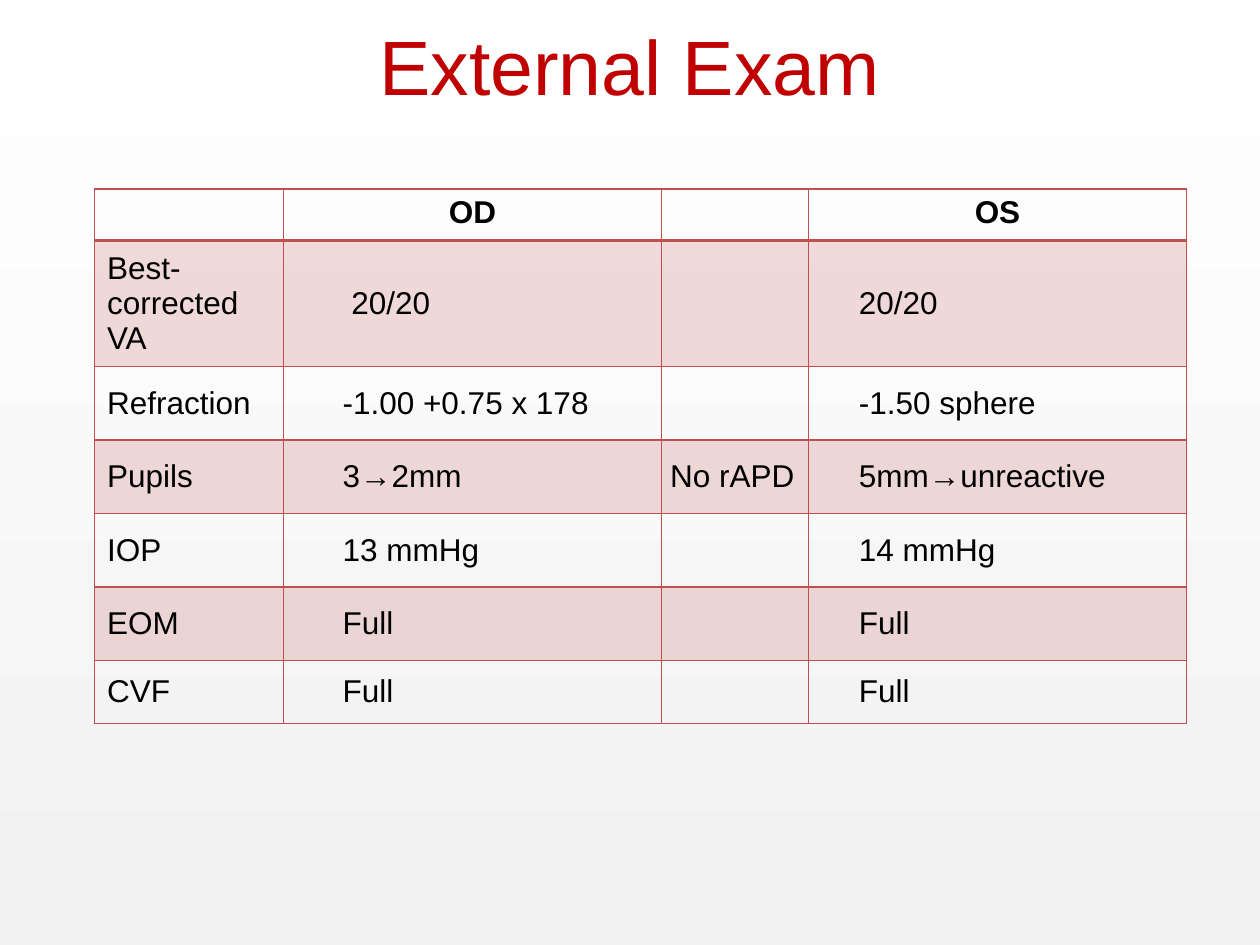
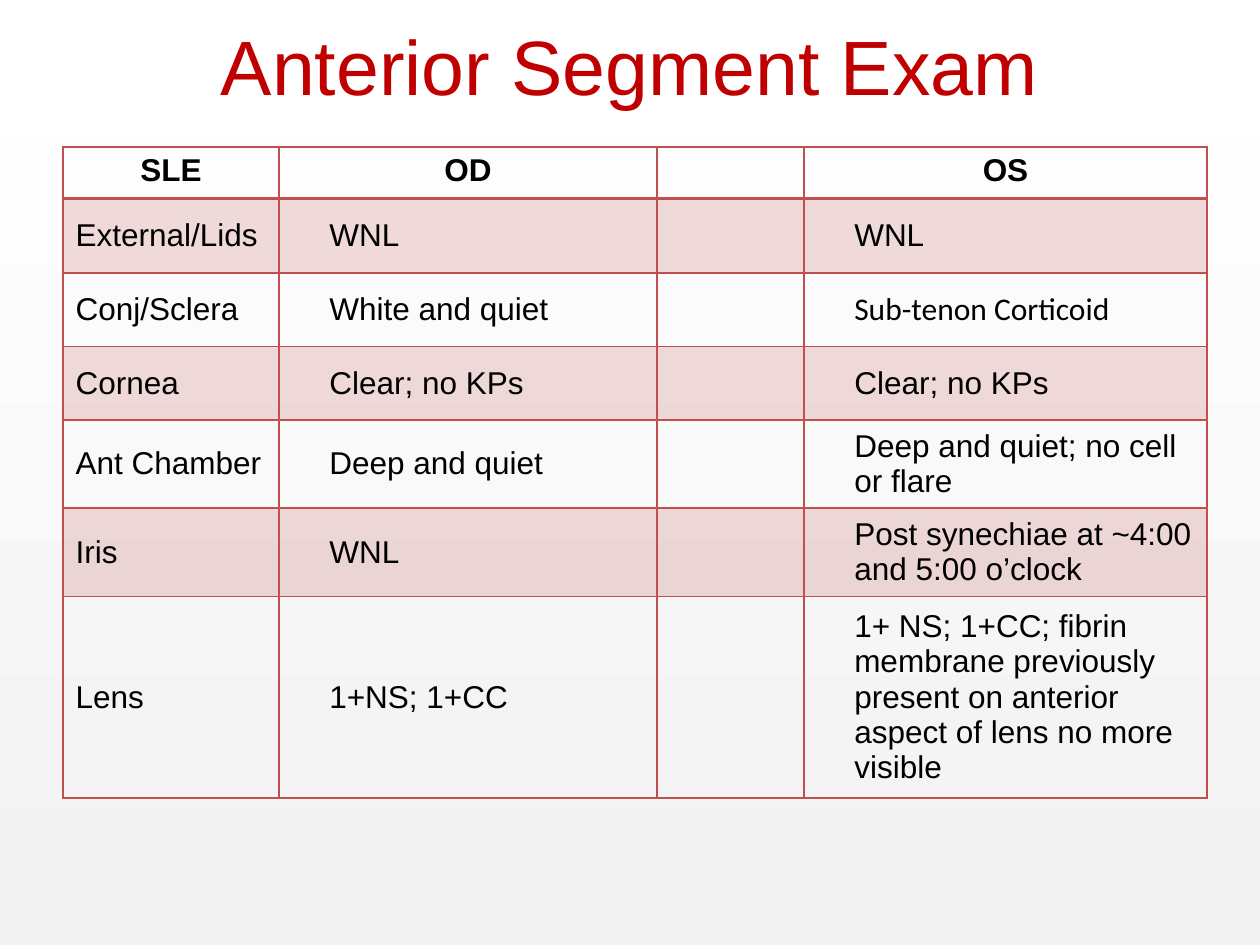
from dataclasses import dataclass

from lxml.etree import SubElement
from pptx import Presentation
from pptx.dml.color import RGBColor
from pptx.enum.shapes import MSO_SHAPE
from pptx.enum.text import MSO_ANCHOR, PP_ALIGN
from pptx.oxml.ns import qn
from pptx.presentation import Presentation as Deck
from pptx.slide import Slide
from pptx.table import _Cell
from pptx.text.text import TextFrame
from pptx.util import Pt

SLIDE_WIDTH, SLIDE_HEIGHT = 720, 540
ACCENT = "C0504D"
TITLE_COLOR = "C00000"
TEXT_COLOR = "000000"
BACKDROP_BOTTOM, BACKDROP_TOP = "F2F2F2", "FFFFFF"
FONT = "Arial"
BAND_ALPHA = 20
THIN, THICK = 1, 2
LABEL_INSET = 7.2
EYE_INSET = 28.8
SPACE_WIDTH = 5
ROW_HEIGHTS = [29.5, 42.5, 42, 42, 42, 42, 36]


@dataclass(frozen=True)
class Entry:
    text: str = ""
    inset: float = LABEL_INSET
    font: str = FONT


@dataclass(frozen=True)
class ExamTable:
    title: str
    left: float
    top: float
    height: float
    column_widths: list[float]
    headings: list[str]
    findings: list[list[Entry]]


def color(value: str) -> RGBColor:
    return RGBColor.from_string(value)


def eye(text: str, extra: float = 0, font: str = FONT) -> Entry:
    return Entry(text, EYE_INSET + extra, font)


def finding(label: str, right_eye: Entry, left_eye: Entry,
            between: Entry = Entry()) -> list[Entry]:
    return [Entry(label), right_eye, between, left_eye]


def write(frame: TextFrame, text: str, size: float, text_color: str,
          font: str = FONT, bold: bool = False, centered: bool = False) -> None:
    paragraph = frame.paragraphs[0]
    paragraph.alignment = PP_ALIGN.CENTER if centered else PP_ALIGN.LEFT
    run = paragraph.add_run()
    run.text = text
    run.font.name = font
    run.font.size = Pt(size)
    run.font.bold = bold
    run.font.color.rgb = color(text_color)


def add_backdrop(slide: Slide) -> None:
    shape = slide.shapes.add_shape(MSO_SHAPE.RECTANGLE, 0, 0, Pt(SLIDE_WIDTH), Pt(SLIDE_HEIGHT))
    shape.shadow.inherit = False
    shape.line.fill.background()
    shape.fill.gradient()
    shape.fill.gradient_angle = 90
    for stop, value in zip(shape.fill.gradient_stops, (BACKDROP_BOTTOM, BACKDROP_TOP)):
        stop.color.rgb = color(value)


def add_title(slide: Slide, title: str) -> None:
    shape = slide.shapes.add_textbox(Pt(36), Pt(-8), Pt(648), Pt(90))
    frame = shape.text_frame
    frame.word_wrap = True
    frame.vertical_anchor = MSO_ANCHOR.MIDDLE
    write(frame, title, 44, TITLE_COLOR, centered=True)


def set_borders(cell: _Cell, top: float, bottom: float) -> None:
    properties = cell._tc.get_or_add_tcPr()
    for side, width in (("L", THIN), ("R", THIN), ("T", top), ("B", bottom)):
        line = SubElement(properties, qn(f"a:ln{side}"), w=str(Pt(width)))
        fill = SubElement(line, qn("a:solidFill"))
        SubElement(fill, qn("a:srgbClr"), val=ACCENT)


def set_fill(cell: _Cell, banded: bool) -> None:
    if not banded:
        cell.fill.background()
        return
    cell.fill.solid()
    cell.fill.fore_color.rgb = color(ACCENT)
    fill_color = cell._tc.tcPr.find(qn("a:solidFill")).find(qn("a:srgbClr"))
    SubElement(fill_color, qn("a:alpha"), val=str(BAND_ALPHA * 1000))


def fill_cell(cell: _Cell, entry: Entry, row_index: int) -> None:
    heading = row_index == 0
    set_borders(cell, THICK if row_index == 1 else THIN, THICK if heading else THIN)
    set_fill(cell, row_index % 2 == 1)
    cell.margin_left = Pt(entry.inset)
    cell.vertical_anchor = MSO_ANCHOR.TOP if heading else MSO_ANCHOR.MIDDLE
    if entry.text:
        write(cell.text_frame, entry.text, 18, TEXT_COLOR, entry.font, heading, heading)


def add_exam_table(slide: Slide, exam: ExamTable) -> None:
    rows = [[Entry(heading) for heading in exam.headings], *exam.findings]
    shape = slide.shapes.add_table(
        len(rows), len(exam.column_widths), Pt(exam.left), Pt(exam.top),
        Pt(sum(exam.column_widths)), Pt(exam.height))
    table = shape.table
    table.first_row = table.horz_banding = False
    for column, width in zip(table.columns, exam.column_widths):
        column.width = Pt(width)
    for row_index, (row, entries) in enumerate(zip(table.rows, rows)):
        row.height = Pt(ROW_HEIGHTS[row_index])
        for cell, entry in zip(row.cells, entries):
            fill_cell(cell, entry, row_index)
    shape.height = Pt(exam.height)


def add_exam_slide(presentation: Deck, exam: ExamTable) -> None:
    slide = presentation.slides.add_slide(presentation.slide_layouts[6])
    add_backdrop(slide)
    add_title(slide, exam.title)
    add_exam_table(slide, exam)


EXAMS = [
    ExamTable(
        "External Exam", 54, 108, 305.28, [108, 216, 84, 216], ["", "OD", "", "OS"],
        [
            finding("Best-corrected VA", eye("20/20", 2 * SPACE_WIDTH), eye("20/20")),
            finding("Refraction", eye("-1.00 +0.75 x 178", SPACE_WIDTH), eye("-1.50 sphere")),
            finding("Pupils", eye("3→2mm", SPACE_WIDTH), eye("5mm→unreactive"),
                    Entry("No rAPD", SPACE_WIDTH)),
            finding("IOP", eye("13 mmHg", SPACE_WIDTH), eye("14 mmHg")),
            finding("EOM", eye("Full", SPACE_WIDTH), eye("Full")),
            finding("CVF", eye("Full", SPACE_WIDTH), eye("Full")),
        ],
    ),
    ExamTable(
        "Anterior Segment Exam", 36, 84, 372.24, [123.4, 216, 84, 230.4],
        ["SLE", "OD", "", "OS"],
        [
            finding("External/Lids", eye("WNL"), eye("WNL")),
            finding("Conj/Sclera", eye("White and quiet"),
                    eye("Sub-tenon Corticoid", font="Calibri")),
            finding("Cornea", eye("Clear; no KPs"), eye("Clear; no KPs")),
            finding("Ant Chamber", eye("Deep and quiet"),
                    eye("Deep and quiet; no cell or flare")),
            finding("Iris", eye("WNL"), eye("Post synechiae at ~4:00 and 5:00 o’clock")),
            finding("Lens", eye("1+NS; 1+CC"),
                    eye("1+ NS; 1+CC; fibrin membrane previously present on anterior "
                        "aspect of lens no more visible")),
        ],
    ),
]


def main() -> None:
    presentation = Presentation()
    presentation.slide_width = Pt(SLIDE_WIDTH)
    presentation.slide_height = Pt(SLIDE_HEIGHT)
    for exam in EXAMS:
        add_exam_slide(presentation, exam)
    presentation.save("out.pptx")


if __name__ == "__main__":
    main()
